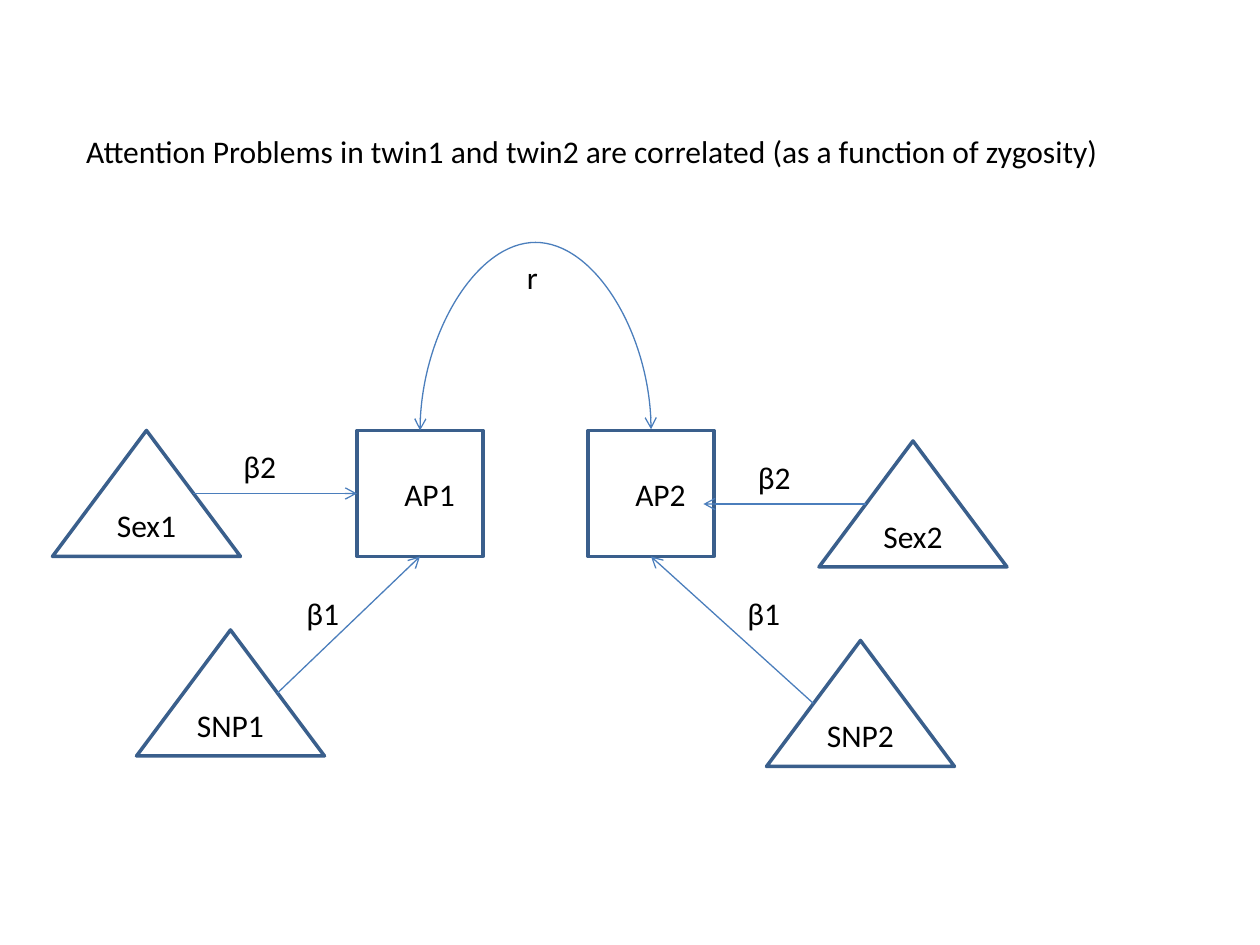
from lxml import etree
from pptx import Presentation
from pptx import util as u
from pptx.dml.color import RGBColor
from pptx.enum import shapes, text
from pptx.oxml.ns import qn

COLORS = {"paper": "FFFFFF", "outline": "3A5F8C", "arrow": "4B7EBC", "ink": "000000"}
COLS, ROWS = 120, 90
SLIDE_W, SLIDE_H = u.Inches(10), u.Inches(7.5)
SIDE, TRI_W, TRI_H = 12, 17.9, 12
FONT = {"name": "Calibri", "size": u.Pt(18), "bold": False}
NO_WRAP = {"word_wrap": False, "vertical_anchor": text.MSO_ANCHOR.TOP}
MIDDLE = {"word_wrap": True, "vertical_anchor": text.MSO_ANCHOR.MIDDLE}


def col(n):
    """Turn grid columns into a length."""
    return u.Emu(round(SLIDE_W * n / COLS))


def row(n):
    """Turn grid rows into a length."""
    return u.Emu(round(SLIDE_H * n / ROWS))


def grid(x, y, w, h):
    """Turn a grid box into left, top, width and height."""
    return col(x), row(y), col(w), row(h)


def color(name):
    """Look up a palette colour."""
    return RGBColor.from_string(COLORS[name])


def write(sp, words, frame, align):
    """Fill a shape with one line of formatted text."""
    tf = sp.text_frame
    for key, value in frame.items():
        setattr(tf, key, value)
    p = tf.paragraphs[0]
    p.alignment = align
    r = p.add_run()
    r.text = words
    for key, value in FONT.items():
        setattr(r.font, key, value)
    r.font.color.rgb = color("ink")


def label(s, words, x, y, w):
    """Place a free label on the grid."""
    sp = s.shapes.add_textbox(*grid(x, y, w, 4.8))
    write(sp, words, NO_WRAP, text.PP_ALIGN.LEFT)


def node(s, kind, words, box, frame=MIDDLE):
    """Draw an outlined variable of the path diagram."""
    sp = s.shapes.add_shape(kind, *grid(*box))
    sp.shadow.inherit = False
    sp.fill.solid()
    sp.fill.fore_color.rgb = color("paper")
    sp.line.color.rgb = color("outline")
    sp.line.width = u.Pt(2)
    write(sp, words, frame, text.PP_ALIGN.CENTER)


def arrow(s, kind, start, end, heads=("tailEnd",)):
    """Draw a thin connector with open arrowheads."""
    cx = s.shapes.add_connector(kind, col(start[0]), row(start[1]), col(end[0]), row(end[1]))
    cx.line.color.rgb = color("arrow")
    cx.line.width = u.Pt(0.75)
    ln = cx.line._get_or_add_ln()
    for head in heads:
        etree.SubElement(ln, qn("a:" + head), type="arrow")
    etree.SubElement(cx._element.spPr, qn("a:effectLst"))
    return cx


def twin(s, number, x, y, sex, snp, beta2, beta1, target, edge):
    """Draw one twin's trait with its two predictors, relative to the trait box."""
    frame = dict(MIDDLE, margin_left=u.Inches(0.25))
    node(s, shapes.MSO_SHAPE.RECTANGLE, f"AP{number}", (x, y, SIDE, SIDE), frame)
    ends = ((x + target[0], y + target[1]), (x + SIDE / 2, y + SIDE))
    for name, (dx, dy), end in zip(("Sex", "SNP"), (sex, snp), ends):
        box = (x + dx, y + dy, TRI_W, TRI_H)
        node(s, shapes.MSO_SHAPE.ISOSCELES_TRIANGLE, f"{name}{number}", box)
        start = (x + dx + TRI_W * edge, y + dy + TRI_H / 2)
        arrow(s, shapes.MSO_CONNECTOR.STRAIGHT, start, end)
    for words, (dx, dy) in (("β2", beta2), ("β1", beta1)):
        label(s, words, x + dx, y + dy, 5.5)


def correlation(s, left, right, y, height):
    """Arch a two-headed curve between the tops of both traits."""
    span, rise = right - left, 0.12
    middle = (left + right) / 2
    top = y - rise / 2 - span / 2
    cx = arrow(s, shapes.MSO_CONNECTOR.CURVE, (middle - rise / 2, top),
               (middle + rise / 2, top + span), ("headEnd", "tailEnd"))
    xfrm = cx._element.spPr.find(qn("a:xfrm"))
    for key, value in {"rot": "5400000", "flipH": "1", "flipV": "1"}.items():
        xfrm.set(key, value)
    guides = cx._element.spPr.find(qn("a:prstGeom")).get_or_add_avLst()
    bend = round(height / rise * 100000)
    etree.SubElement(guides, qn("a:gd"), name="adj1", fmla=f"val {bend}")
    label(s, "r", 49, 24, 3.5)


def heading(s, words, box):
    """Place the slide's statement in its title placeholder."""
    sp = s.shapes.title
    sp.left, sp.top, sp.width, sp.height = grid(*box)
    write(sp, words, NO_WRAP, text.PP_ALIGN.LEFT)


def main():
    """Build the twin path diagram."""
    prs = Presentation()
    prs.slide_width, prs.slide_height = SLIDE_W, SLIDE_H
    s = prs.slides.add_slide(prs.slide_layouts[5])
    heading(s, "Attention Problems in twin1 and twin2 are correlated "
               "(as a function of zygosity)", (7, 12, 99.8, 4.8))
    twin(s, 1, 34, 41, sex=(-29, 0), snp=(-21, 19), beta2=(-12, 1), beta1=(-6, 15),
         target=(0, 6), edge=0.75)
    twin(s, 2, 56, 41, sex=(22, 1), snp=(17, 20), beta2=(15, 2), beta1=(14, 15),
         target=(11, 7), edge=0.25)
    correlation(s, 40, 62, 41, 18.2)
    prs.save("out.pptx")


if __name__ == "__main__":
    main()
